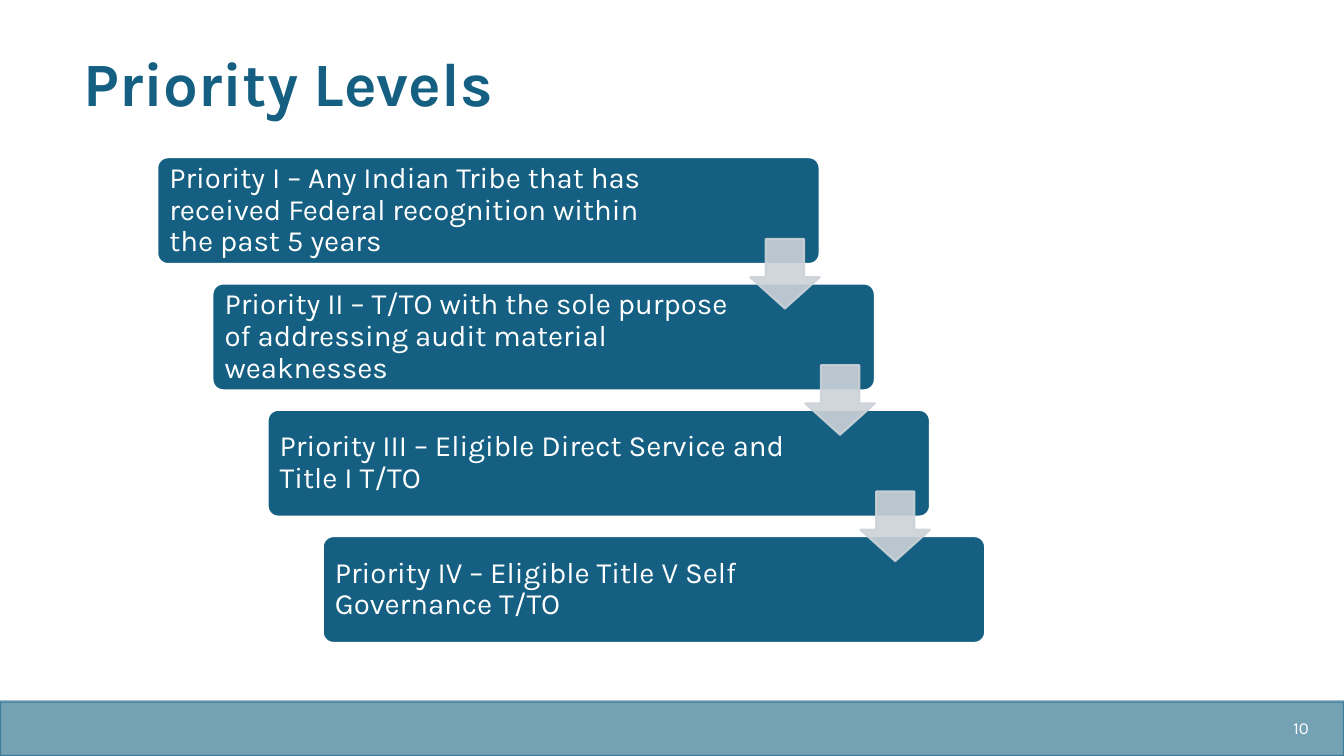
from dataclasses import dataclass

import pptx
import pptx.dml.color
import pptx.enum.shapes
import pptx.enum.text
import pptx.oxml
import pptx.oxml.ns
import pptx.util

Inches = pptx.util.Inches
Shape = pptx.enum.shapes.MSO_SHAPE
Align = pptx.enum.text.PP_ALIGN
Anchor = pptx.enum.text.MSO_ANCHOR


@dataclass(frozen=True)
class Theme:
    font: str = "Karla"
    blue: str = "156082"
    white: str = "FFFFFF"
    grey: str = "CCD2D8"
    title_size: int = 44
    step_size: int = 21
    number_size: int = 12
    line_width: float = 1.5


@dataclass(frozen=True)
class Box:
    left: float
    top: float
    width: float
    height: float

    def emu(self) -> list[int]:
        return [Inches(v) for v in (self.left, self.top, self.width, self.height)]


@dataclass(frozen=True)
class Step:
    text: str
    text_width: float


THEME = Theme()
STEPS = [
    Step("Priority I – Any Indian Tribe that has received Federal recognition "
         "within the past 5 years", 5.34),
    Step("Priority II – T/TO with the sole purpose of addressing audit material "
         "weaknesses", 5.27),
    Step("Priority III – Eligible Direct Service and Title I T/TO", 5.28),
    Step("Priority IV – Eligible Title V Self Governance T/TO", 5.27),
]
# Staircase: first card, first arrow and the offset from one step to the next
CARD = Box(1.56, 1.56, 6.57, 1.06)
ARROW = Box(7.44, 2.37, 0.69, 0.69)
STEP_X, STEP_Y = 0.547, 1.253
CARD_PAD = 0.03


def shifted(box: Box, i: int) -> Box:
    return Box(box.left + i * STEP_X, box.top + i * STEP_Y, box.width, box.height)


def add_shape(slide, kind, box: Box, fill: str, line: str, opacity: int = 100,
              adjustments: tuple[float, ...] = ()) -> None:
    sp = slide.shapes.add_shape(kind, *box.emu())
    sp.shadow.inherit = False
    for i, value in enumerate(adjustments):
        sp.adjustments[i] = value
    sp.fill.solid()
    sp.fill.fore_color.rgb = pptx.dml.color.RGBColor.from_string(fill)
    sp.line.color.rgb = pptx.dml.color.RGBColor.from_string(line)
    sp.line.width = pptx.util.Pt(THEME.line_width)
    if opacity < 100:
        for color in sp._element.spPr.iter(pptx.oxml.ns.qn("a:srgbClr")):
            alpha = pptx.oxml.parse_xml(
                f'<a:alpha {pptx.oxml.ns.nsdecls("a")} val="{opacity * 1000}"/>')
            color.append(alpha)


def add_text(slide, text: str, box: Box, size: int, color: str, bold: bool = False,
             align=Align.LEFT, anchor=Anchor.MIDDLE, spacing: float = 1.0,
             inset: float | None = None) -> None:
    tf = slide.shapes.add_textbox(*box.emu()).text_frame
    tf.word_wrap = True
    tf.vertical_anchor = anchor
    if inset is not None:
        tf.margin_left = tf.margin_right = Inches(inset)
        tf.margin_top = tf.margin_bottom = Inches(inset)
    p = tf.paragraphs[0]
    p.text = text
    p.alignment = align
    p.line_spacing = spacing
    p.font.name = THEME.font
    p.font.size = pptx.util.Pt(size)
    p.font.bold = bold
    p.font.color.rgb = pptx.dml.color.RGBColor.from_string(color)


def add_step(slide, step: Step, i: int) -> None:
    card = shifted(CARD, i)
    add_shape(slide, Shape.ROUNDED_RECTANGLE, card, THEME.blue, THEME.white,
              adjustments=(0.1,))
    text_box = Box(card.left + CARD_PAD, card.top + CARD_PAD,
                   step.text_width, card.height - 2 * CARD_PAD)
    add_text(slide, step.text, text_box, THEME.step_size, THEME.white,
             spacing=0.9, inset=0.09)


def main() -> None:
    prs = pptx.Presentation()
    prs.slide_width, prs.slide_height = Inches(13.33), Inches(7.5)
    slide = prs.slides.add_slide(prs.slide_layouts[6])

    # Footer band and slide number
    add_shape(slide, Shape.RECTANGLE, Box(0, 6.96, 13.33, 0.54),
              THEME.blue, THEME.blue, opacity=59)
    add_text(slide, "10", Box(11.65, 7.02, 1.43, 0.4), THEME.number_size,
             THEME.white, align=Align.RIGHT)

    # Title
    add_text(slide, "Priority Levels", Box(0.73, 0.48, 10.56, 0.78),
             THEME.title_size, THEME.blue, bold=True, anchor=Anchor.TOP, spacing=0.9)

    # Priority cards, then the arrows that join them
    for i, step in enumerate(STEPS):
        add_step(slide, step, i)
    for i in range(len(STEPS) - 1):
        add_shape(slide, Shape.DOWN_ARROW, shifted(ARROW, i), THEME.grey, THEME.grey,
                  opacity=90, adjustments=(0.55, 0.45))

    prs.save("out.pptx")


if __name__ == "__main__":
    main()
